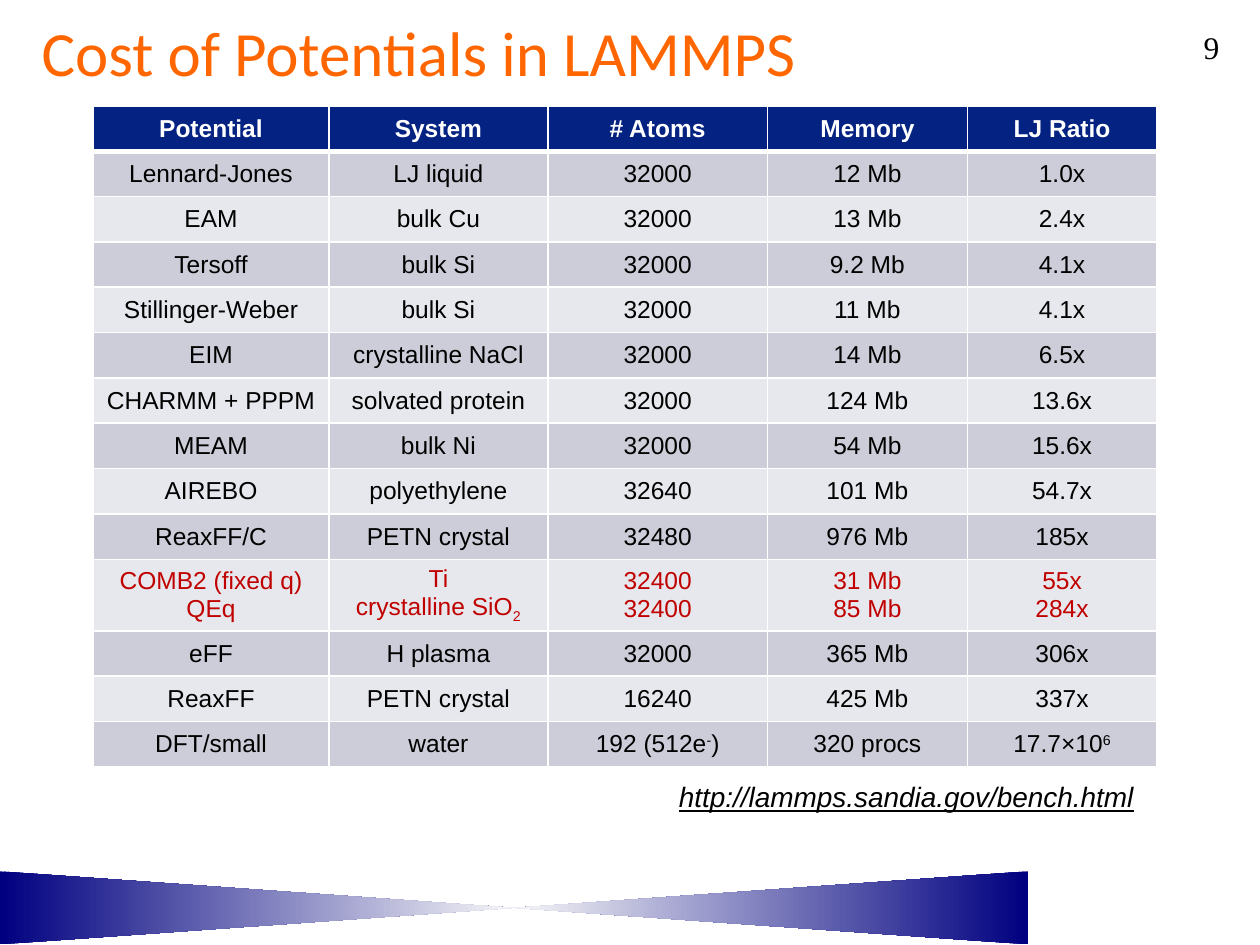
from copy import deepcopy
from dataclasses import dataclass

from lxml.etree import SubElement
from pptx import Presentation
from pptx.dml.color import RGBColor
from pptx.enum.shapes import MSO_SHAPE as Preset
from pptx.enum.text import MSO_ANCHOR as Anchor, MSO_AUTO_SIZE as AutoSize, PP_ALIGN as Align
from pptx.oxml.ns import qn
from pptx.util import Inches, Pt

SLIDE_WIDTH, SLIDE_HEIGHT = Inches(10), Inches(7.5)
GRID_COLUMNS, GRID_ROWS = 100, 75
COLUMN_SHARES = (18.7, 17.4, 17.4, 15.9, 15)
ROW_SHARE = 3.6
HEADER_FILL, BAND_FILLS = "042282", ("E7E8ED", "CCCDD8")
WHITE, BLACK, RED, ORANGE, NAVY = "FFFFFF", "000000", "C00000", "FF6600", "000080"


@dataclass(frozen=True)
class Frame:
    """A place on the slide grid, in columns and rows."""
    left: float
    top: float
    width: float
    height: float

    def lengths(self) -> tuple[int, int, int, int]:
        """Return left, top, width and height as slide lengths."""
        column, row = SLIDE_WIDTH / GRID_COLUMNS, SLIDE_HEIGHT / GRID_ROWS
        return (round(self.left * column), round(self.top * row),
                round(self.width * column), round(self.height * row))


@dataclass(frozen=True)
class Span:
    """A piece of text, raised or lowered by a percentage."""
    text: str
    baseline: int = 0


@dataclass(frozen=True)
class Style:
    """The look of a text."""
    font: str
    size: float
    color: str = BLACK
    bold: bool = False
    italic: bool = False
    underline: bool = False
    align: Align = Align.CENTER


Line = tuple[Span, ...]

HEADINGS = ("Potential", "System", "# Atoms", "Memory", "LJ Ratio")
BENCHMARKS = (
    ("Lennard-Jones", "LJ liquid", "32000", "12 Mb", "1.0x"),
    ("EAM", "bulk Cu", "32000", "13 Mb", "2.4x"),
    ("Tersoff", "bulk Si", "32000", "9.2 Mb", "4.1x"),
    ("Stillinger-Weber", "bulk Si", "32000", "11 Mb", "4.1x"),
    ("EIM", "crystalline NaCl", "32000", "14 Mb", "6.5x"),
    ("CHARMM + PPPM", "solvated protein", "32000", "124 Mb", "13.6x"),
    ("MEAM", "bulk Ni", "32000", "54 Mb", "15.6x"),
    ("AIREBO", "polyethylene", "32640", "101 Mb", "54.7x"),
    ("ReaxFF/C", "PETN crystal", "32480", "976 Mb", "185x"),
    ("COMB2 (fixed q)\nQEq",
     ((Span("Ti"),), (Span("crystalline SiO"), Span("2", -25))),
     "32400\n32400", "31 Mb\n85 Mb", "55x\n284x"),
    ("eFF", "H plasma", "32000", "365 Mb", "306x"),
    ("ReaxFF", "PETN crystal", "16240", "425 Mb", "337x"),
    ("DFT/small", "water", ((Span("192 (512e"), Span("-", 30), Span(")")),),
     "320 procs", ((Span("17.7×10"), Span("6", 30)),)),
)
HIGHLIGHTED = "COMB2"


def rgb(color: str) -> RGBColor:
    """Turn a hex string into a colour."""
    return RGBColor.from_string(color)


def write(text_frame, content: str | tuple[Line, ...], style: Style) -> None:
    """Fill a text frame with styled paragraphs."""
    lines = content
    if isinstance(content, str):
        lines = tuple((Span(line),) for line in content.split("\n"))
    formats = {"name": style.font, "size": Pt(style.size), "bold": style.bold,
               "italic": style.italic, "underline": style.underline}
    for number, line in enumerate(lines):
        para = text_frame.add_paragraph() if number else text_frame.paragraphs[0]
        para.alignment = style.align
        for span in line:
            run = para.add_run()
            run.text = span.text
            for name, value in formats.items():
                setattr(run.font, name, value)
            run.font.color.rgb = rgb(style.color)
            if span.baseline:
                run.font._element.set("baseline", str(span.baseline * 1000))


def draw_title(slide, text: str, frame: Frame, style: Style) -> None:
    """Place and fill the title placeholder."""
    title = slide.shapes.title
    title.left, title.top, title.width, title.height = frame.lengths()
    title.text_frame.auto_size = AutoSize.NONE
    title.text_frame.vertical_anchor = Anchor.MIDDLE
    write(title.text_frame, text, style)


def draw_text(slide, text: str, frame: Frame, style: Style, anchor: Anchor, wrap: bool) -> None:
    """Add a text box."""
    box = slide.shapes.add_textbox(*frame.lengths())
    box.text_frame.word_wrap = wrap
    box.text_frame.auto_size = AutoSize.NONE if wrap else AutoSize.SHAPE_TO_FIT_TEXT
    box.text_frame.vertical_anchor = anchor
    write(box.text_frame, text, style)


def draw_ribbon(slide, frame: Frame) -> None:
    """Add the hourglass that lies along the foot of the slide."""
    ribbon = slide.shapes.add_shape(Preset.FLOWCHART_COLLATE, *frame.lengths())
    ribbon.rotation = 270
    ribbon.shadow.inherit = False
    ribbon.line.fill.background()
    ribbon.fill.gradient()
    ribbon.fill.gradient_angle = 90
    stops = next(ribbon._element.iter(qn("a:gsLst")))
    stops.append(deepcopy(stops[0]))
    shades = ((0, NAVY), (0.5, "F6F6F8"), (1, NAVY))
    for stop, (position, color) in zip(ribbon.fill.gradient_stops, shades):
        stop.position = position
        stop.color.rgb = rgb(color)


def add_borders(cell, widths: dict[str, float]) -> None:
    """Give a cell white borders of the given widths."""
    properties = cell._tc.get_or_add_tcPr()
    for side, width in widths.items():
        border = SubElement(properties, qn(f"a:ln{side}"), w=str(Pt(width)))
        fill = SubElement(border, qn("a:solidFill"))
        SubElement(fill, qn("a:srgbClr"), val=WHITE)


def draw_table(slide, left: float, top: float) -> None:
    """Add the table of benchmarks."""
    records = (HEADINGS, *BENCHMARKS)
    frame = Frame(left, top, sum(COLUMN_SHARES), ROW_SHARE * len(records))
    table = slide.shapes.add_table(len(records), len(HEADINGS), *frame.lengths()).table
    for column, share in zip(table.columns, COLUMN_SHARES):
        column.width = round(SLIDE_WIDTH * share / GRID_COLUMNS)
    for number, record in enumerate(records):
        header = number == 0
        fill = HEADER_FILL if header else BAND_FILLS[number % 2]
        highlighted = str(record[0]).startswith(HIGHLIGHTED)
        color = WHITE if header else RED if highlighted else BLACK
        style = Style("Arial", 14, color, bold=header)
        widths = {"L": 1, "R": 1, "T": 3 if number == 1 else 1, "B": 3 if header else 1}
        for cell, content in zip(table.rows[number].cells, record):
            add_borders(cell, widths)
            cell.fill.solid()
            cell.fill.fore_color.rgb = rgb(fill)
            cell.vertical_anchor = Anchor.MIDDLE
            write(cell.text_frame, content, style)


def main() -> None:
    """Build and save the slide."""
    deck = Presentation()
    deck.slide_width, deck.slide_height = SLIDE_WIDTH, SLIDE_HEIGHT
    slide = deck.slides.add_slide(deck.slide_layouts[5])
    draw_ribbon(slide, Frame(37.9, 31.2, 5.8, 81.7))
    draw_title(slide, "Cost of Potentials in LAMMPS", Frame(2.3, 0.5, 89.7, 7.1),
               Style("Calibri", 36, ORANGE, align=Align.LEFT))
    draw_table(slide, 7.4, 8.4)
    draw_text(slide, "9", Frame(92.3, 0, 7.7, 7.4), Style("Times New Roman", 18),
              Anchor.MIDDLE, wrap=True)
    draw_text(slide, "http://lammps.sandia.gov/bench.html", Frame(52.9, 61.4, 38.6, 3.7),
              Style("Arial", 16, italic=True, underline=True, align=Align.LEFT),
              Anchor.TOP, wrap=False)
    deck.save("out.pptx")


if __name__ == "__main__":
    main()
